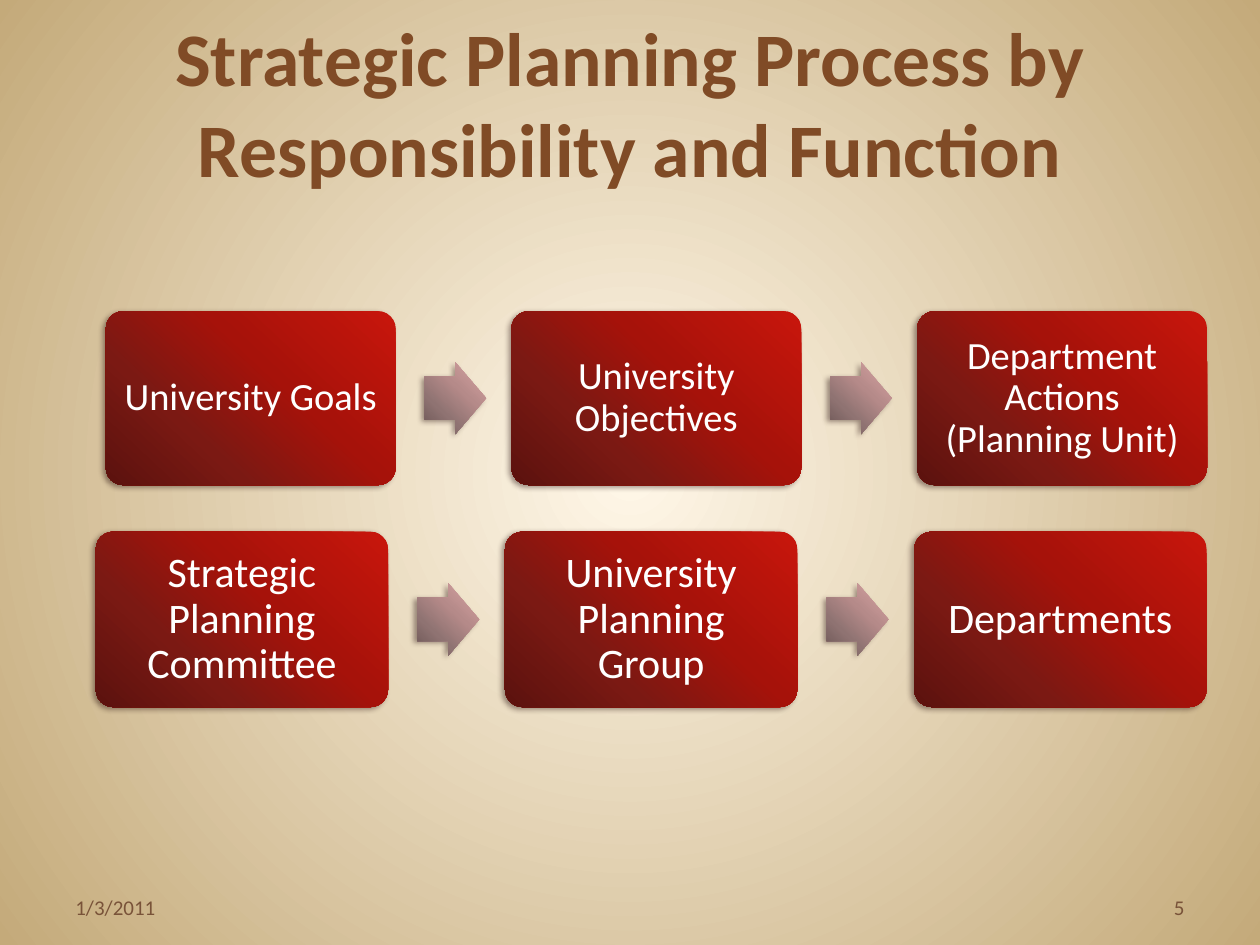
import pptx
import pptx.dml.color
import pptx.enum.shapes
import pptx.enum.text
import pptx.oxml
import pptx.oxml.ns
import pptx.util

Inches = pptx.util.Inches
Pt = pptx.util.Pt
RGB = pptx.dml.color.RGBColor
Shape = pptx.enum.shapes.MSO_SHAPE
Align = pptx.enum.text.PP_ALIGN
Anchor = pptx.enum.text.MSO_ANCHOR
qn = pptx.oxml.ns.qn
NS = pptx.oxml.ns.nsdecls("a")

BROWN = RGB(0x80, 0x4B, 0x26)
MUTED = RGB(0x79, 0x53, 0x39)
WHITE = RGB(0xFF, 0xFF, 0xFF)
SHADE = RGB(0x1A, 0x00, 0x00)
SAND = [(0, RGB(0xFF, 0xF7, 0xE8)), (100, RGB(0xC4, 0xAA, 0x7A))]
RED = [(0, RGB(0xC8, 0x16, 0x0C)), (40, RGB(0xA6, 0x12, 0x0A)),
       (70, RGB(0x7B, 0x19, 0x13)), (100, RGB(0x5B, 0x12, 0x0E))]
ROSE = [(0, RGB(0xDA, 0xA6, 0xA5)), (40, RGB(0xB5, 0x8A, 0x89)),
        (70, RGB(0x8F, 0x73, 0x72)), (100, RGB(0x6A, 0x55, 0x54))]
LINEAR = f'<a:lin ang="{133 * 60000}" scaled="0"/>'
RADIAL = ('<a:path path="circle"><a:fillToRect l="50000" t="50000" '
          'r="50000" b="50000"/></a:path>')


def blend(fill, root, stops, mode):
    """Give fill a gradient of several stops; root is the XML that holds it."""
    fill.solid()
    old = root.find(".//" + qn("a:solidFill"))
    marks = "".join(f'<a:gs pos="{pos * 1000}"><a:srgbClr val="{color}"/></a:gs>'
                    for pos, color in stops)
    new = pptx.oxml.parse_xml(
        f'<a:gradFill {NS} rotWithShape="1"><a:gsLst>{marks}</a:gsLst>{mode}</a:gradFill>')
    old.getparent().replace(old, new)


def write(frame, text, size, color, bold=False, align=Align.CENTER,
          anchor=Anchor.MIDDLE, inset=None, space=None):
    frame.word_wrap = True
    frame.vertical_anchor = anchor
    if inset is not None:
        frame.margin_left = frame.margin_right = Inches(inset)
        frame.margin_top = frame.margin_bottom = Inches(inset)
    para = frame.paragraphs[0]
    para.text = text
    para.alignment = align
    para.line_spacing = space
    for run in para.runs:
        font = run.font
        font.name, font.size, font.bold = "Calibri", Pt(size), bold
        font.color.rgb = color


class Deck:
    def __init__(self):
        self.show = pptx.Presentation()
        self.show.slide_width, self.show.slide_height = Inches(10), Inches(7.5)
        self.slide = self.show.slides.add_slide(self.show.slide_layouts[5])
        blend(self.slide.background.fill, self.slide.element, SAND, RADIAL)

    def title(self, text):
        head = self.slide.shapes.title
        head.left, head.top = Inches(0.5), Inches(0.33)
        head.width, head.height = Inches(9), Inches(1.25)
        write(head.text_frame, text, 43.2, BROWN, bold=True, anchor=Anchor.BOTTOM)

    def label(self, text, left, align):
        box = self.slide.shapes.add_textbox(
            Inches(left), Inches(6.83), Inches(2.33), Inches(0.52))
        write(box.text_frame, text, 12, MUTED, align=align, anchor=Anchor.BOTTOM)

    def block(self, group, kind, place, stops, adjust):
        item = group.shapes.add_shape(kind, *map(Inches, place))
        for i, value in enumerate(adjust):
            item.adjustments[i] = value
        blend(item.fill, item.element.spPr, stops, LINEAR)
        item.line.fill.background()
        item.shadow.inherit = False
        item.element.spPr.find(qn("a:effectLst")).append(pptx.oxml.parse_xml(
            f'<a:outerShdw {NS} blurRad="{Pt(3.1)}" dist="{Pt(2)}" '
            f'dir="{150 * 60000}" algn="tl" rotWithShape="0">'
            f'<a:srgbClr val="{SHADE}"><a:alpha val="40000"/></a:srgbClr></a:outerShdw>'))
        return item

    def flow(self, names, left, top, width, size, inset):
        """Draw a row of boxes joined by block arrows, all scaled from box width."""
        group = self.slide.shapes.add_group_shape()
        high, wide, tall = 0.6 * width, 0.212 * width, 0.248 * width
        for i, name in enumerate(names):
            x = left + 1.4 * width * i
            if i:
                self.block(group, Shape.RIGHT_ARROW,
                           (x - 0.3 * width, top + (high - tall) / 2, wide, tall),
                           ROSE, (0.6, 0.5))
            box = self.block(group, Shape.ROUNDED_RECTANGLE,
                             (x, top, width, high), RED, (0.1,))
            write(box.text_frame, name, size, WHITE, inset=inset, space=0.9)


def main():
    deck = Deck()
    deck.title("Strategic Planning Process by\nResponsibility and Function")
    deck.flow(["University Goals", "University Objectives",
               "Department Actions\n(Planning Unit)"], 0.84, 2.47, 2.3, 22, 0.09)
    deck.flow(["Strategic Planning Committee", "University Planning Group",
               "Departments"], 0.76, 4.22, 2.32, 24, 0.1)
    deck.label("1/3/2011", 0.5, Align.LEFT)
    deck.label("5", 7.17, Align.RIGHT)
    deck.show.save("out.pptx")


if __name__ == "__main__":
    main()
